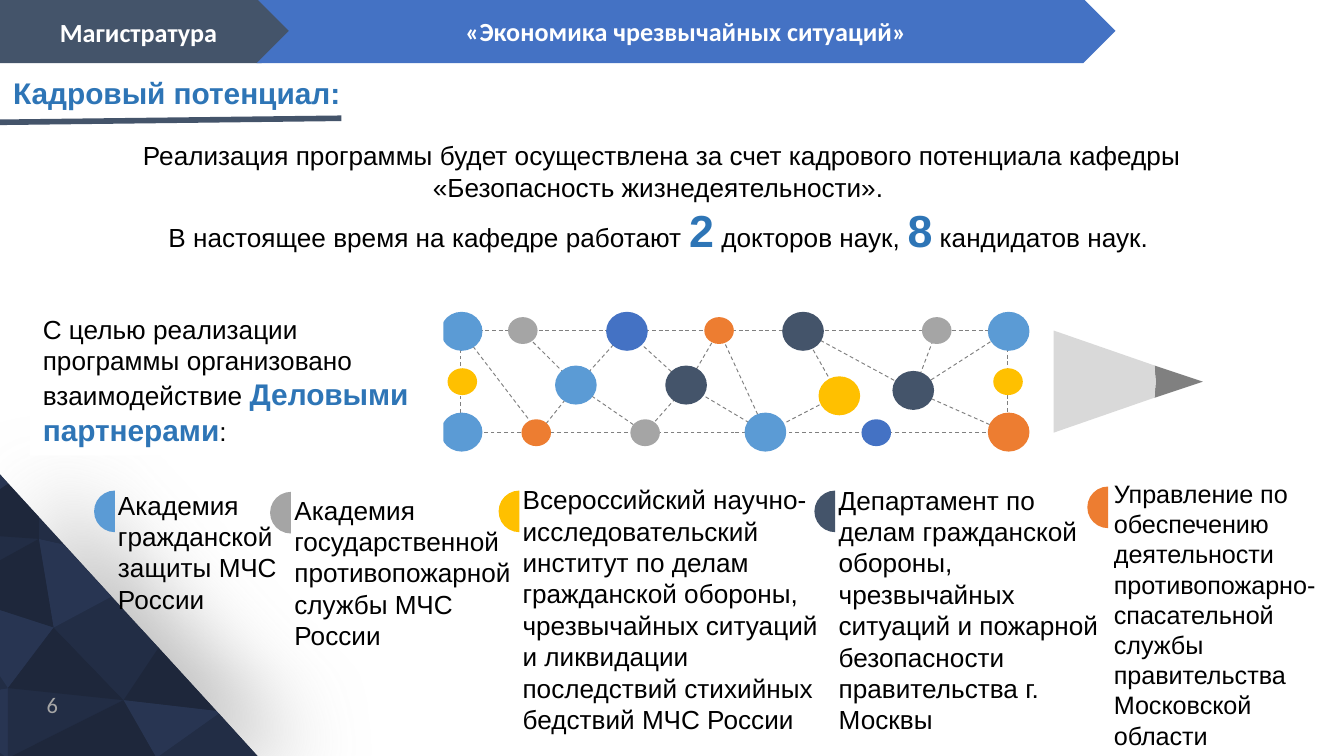
from lxml import etree
from pptx import Presentation, util as u
from pptx.dml.color import RGBColor
from pptx.enum import dml, shapes, text
from pptx.oxml.ns import qn

PX = 9144  # EMU in one px, 100 px to the inch
LOW = 563  # bottom edge of the mosaic
KIND = shapes.MSO_SHAPE
COLORS = {
    "navy": "222D45", "deep": "1E273B", "steel": "283552",
    "sky": "5B9BD5", "blue": "4472C4", "slate": "44546A", "gold": "FFC000",
    "orange": "ED7D31", "gray": "A5A5A5", "mid": "808080", "pale": "D9D9D9",
    "accent": "2E75B6", "black": "000000", "white": "FFFFFF", "page": "A6A6A6",
}

# Corner mosaic: shared vertices, then faces spelled with their letters
NODES = {
    "a": (0, 353), "b": (6, 360), "c": (0, 364), "d": (29, 385), "e": (29, 401),
    "f": (0, 399), "g": (0, 417), "h": (40, 467), "i": (0, 454), "j": (0, 503),
    "k": (6, 512), "l": (0, 513), "m": (0, 560), "n": (4, LOW), "o": (6, LOW),
    "p": (92, 521), "q": (8, LOW), "r": (116, LOW), "s": (105, 468),
    "t": (118, 482), "u": (47, 405), "v": (83, 444), "w": (38, 395),
    "x": (161, 529), "y": (163, 531), "z": (118, LOW), "A": (192, LOW),
    "B": (0, LOW),
}
FACES = [
    ("aAB", "navy"), ("konml", "steel"), ("jkl", "navy"), ("qokp", "navy"),
    ("abc", "steel"), ("feg", "navy"), ("bdefc", "deep"), ("ehig", "deep"),
    ("ihkj", "steel"), ("pkh", "deep"), ("rqp", "deep"), ("phst", "navy"),
    ("heuv", "steel"), ("uew", "navy"), ("xpt", "deep"), ("zrpxy", "steel"),
    ("Azy", "navy"),
]

# Network of partners
LINKS = [
    [(343, 246), (401, 322), (429, 287), (466, 246), (511, 287), (570, 322),
     (624, 294), (597, 246), (680, 291), (750, 246)],
    [(750, 322), (680, 291), (697, 246)],
    [(570, 322), (535, 246), (511, 287), (480, 322), (429, 287), (388, 246)],
]
BIG, SMALL = (31, 29), (22, 20)
DOTS = [
    (BIG, [(344, 322, "sky"), (429, 287, "sky"), (511, 287, "slate"),
           (570, 322, "sky"), (625, 295, "gold"), (467, 247, "blue"),
           (598, 247, "slate"), (680, 291, "slate"), (344, 247, "sky"),
           (751, 322, "orange"), (751, 247, "sky")]),
    (SMALL, [(344, 284, "gold"), (750, 284, "gold"), (399, 322, "orange"),
             (480, 322, "gray"), (652, 322, "blue"), (389, 246, "gray"),
             (535, 246, "orange"), (697, 246, "gray")]),
]
CONE = [
    ([(859, 296), (895, 284), (859, 272), (860, 284)], "mid"),
    ([(784, 322), (859, 296), (860, 284), (859, 272), (784, 246)], "pale"),
]

TITLE = [[("Кадровый потенциал:", 16, "accent")]]
STAFF = [
    [("Реализация программы будет осуществлена за счет кадрового потенциала "
      "кафедры «Безопасность жизнедеятельности». ", 14, "black")],
    [("В настоящее время на кафедре работают ", 14, "black"), ("2", 24, "accent"),
     (" докторов наук, ", 14, "black"), ("8", 24, "accent"),
     (" кандидатов наук. ", 14, "black")],
]
GOAL = [[("С целью реализации программы организовано взаимодействие ", 14, "black"),
         ("Деловыми партнерами", 16, "accent"), (":", 14, "black")]]
# text, size, box, centred upright without left inset, marker corner, colour
PARTNERS = [
    ("Академия гражданской защиты МЧС России",
     14, (78, 359, 176, 104), False, (70, 365), "sky"),
    ("Академия государственной противопожарной службы МЧС России",
     14, (219, 362, 175, 128), True, (201, 366), "gray"),
    ("Всероссийский научно-исследовательский институт по делам гражданской "
     "обороны, чрезвычайных ситуаций и ликвидации последствий стихийных "
     "бедствий МЧС России",
     14, (379, 355, 247, 199), False, (371, 365), "gold"),
    ("Департамент по делам гражданской обороны, чрезвычайных ситуаций и "
     "пожарной безопасности правительства г. Москвы",
     14, (624, 354, 205, 199), True, (606, 365), "slate"),
    ("Управление по обеспечению деятельности противопожарно-спасательной "
     "службы правительства Московской области",
     13.5, (819, 351, 197, 222), False, (809, 362), "orange"),
]
HEADS = [
    (KIND.PENTAGON, (0, 0, 218, 47), "Магистратура", "slate"),
    (KIND.CHEVRON, (191, -1, 639, 48), "«Экономика чрезвычайных ситуаций»", "blue"),
]

deck = Presentation()
deck.slide_width, deck.slide_height = u.Inches(10), u.Inches(10 * 9 / 16)
slide = deck.slides.add_slide(deck.slide_layouts[6])
tree = slide.shapes


def tint(name):
    return RGBColor.from_string(COLORS[name])


def paint(shape, fill=None):
    """Fill the shape, or give it a thin dashed outline when no fill is named."""
    shape.shadow.inherit = False
    if fill:
        shape.fill.solid()
        shape.fill.fore_color.rgb = tint(fill)
        shape.line.fill.background()
    else:
        shape.fill.background()
        shape.line.color.rgb = tint("mid")
        shape.line.width = u.Pt(0.5)
        shape.line.dash_style = dml.MSO_LINE.DASH
    return shape


def form(kind, box, fill=None):
    return paint(tree.add_shape(kind, *(n * PX for n in box)), fill)


def trace(points, fill=None):
    """Draw a closed face when filled, else an open dashed path."""
    pen = tree.build_freeform(*points[0], scale=PX)
    pen.add_line_segments(points[1:], close=bool(fill))
    return paint(pen.convert_to_shape(), fill)


def write(paras, box=None, shape=None, font="Arial", align="LEFT",
          anchor="TOP", left=10, bold=False):
    """Put paragraphs of (text, size, colour) runs in a shape or a new text box."""
    shape = shape or tree.add_textbox(*(n * PX for n in box))
    frame = shape.text_frame
    frame.word_wrap = True
    frame.margin_left = left * PX
    frame.vertical_anchor = getattr(text.MSO_ANCHOR, anchor)
    for i, runs in enumerate(paras):
        para = frame.add_paragraph() if i else frame.paragraphs[0]
        para.alignment = getattr(text.PP_ALIGN, align)
        for words, size, color in runs:
            run = para.add_run()
            run.text = words
            run.font.name, run.font.size = font, u.Pt(size)
            run.font.bold = bold or color == "accent"
            run.font.color.rgb = tint(color)


def glow(shape):
    """Cast a soft half-clear shadow to the right."""
    fx = shape._element.spPr.find(qn("a:effectLst"))
    cast = etree.SubElement(fx, qn("a:outerShdw"), blurRad=str(u.Pt(48)),
                            dist=str(u.Pt(28)), dir="0", algn="l", rotWithShape="0")
    hue = etree.SubElement(cast, qn("a:srgbClr"), val=COLORS["mid"])
    etree.SubElement(hue, qn("a:alpha"), val="50000")


glow(trace([(0, 360), (184, 560), (0, 560)], "navy"))
for face, color in FACES:
    trace([NODES[key] for key in face], color)

write(TITLE, (0, 51, 537, 37))
rule = tree.add_connector(shapes.MSO_CONNECTOR.STRAIGHT,
                          0, 91 * PX, 254 * PX, 88 * PX)
rule.line.color.rgb = tint("slate")
rule.line.width = u.Pt(3)
etree.SubElement(rule._element.spPr, qn("a:effectLst"))

form(KIND.RECTANGLE, (343, 246, 407, 76))
for link in LINKS:
    trace(link)
for (wide, high), dots in DOTS:
    for x, y, color in dots:
        form(KIND.OVAL, (x - (wide + 1) // 2, y - (high + 1) // 2, wide, high), color)
for part, color in CONE:
    trace(part, color)

write(STAFF, (78, 99, 829, 98), align="CENTER")
write(GOAL, shape=form(KIND.RECTANGLE, (22, 228, 308, 111), "white"))
for words, size, box, mid, spot, color in PARTNERS:
    write([[(words, size, "black")]], box, anchor="MIDDLE" if mid else "TOP",
          left=0 if mid else 10)
    half = form(KIND.PIE, (*spot, 31, 31), color)
    half.adjustments[0], half.adjustments[1] = 54, 162

write([[("6", 12, "page")]], (0, 509, 53, 30), font="Calibri",
      align="RIGHT", anchor="MIDDLE")
for kind, box, words, color in HEADS:
    write([[(words, 14, "white")]], shape=form(kind, box, color),
          font="Calibri", align="CENTER", anchor="MIDDLE", bold=True)

deck.save("out.pptx")
